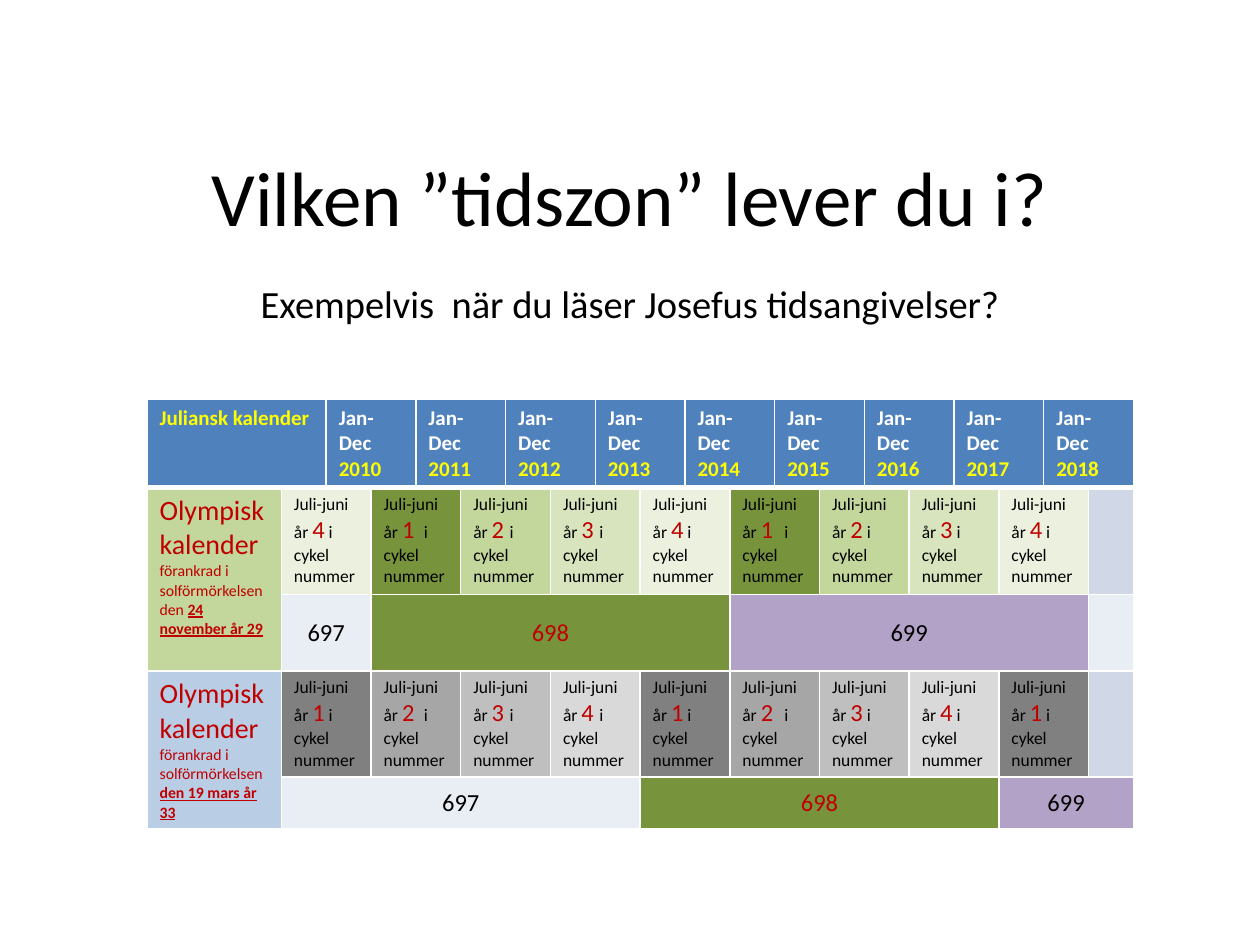
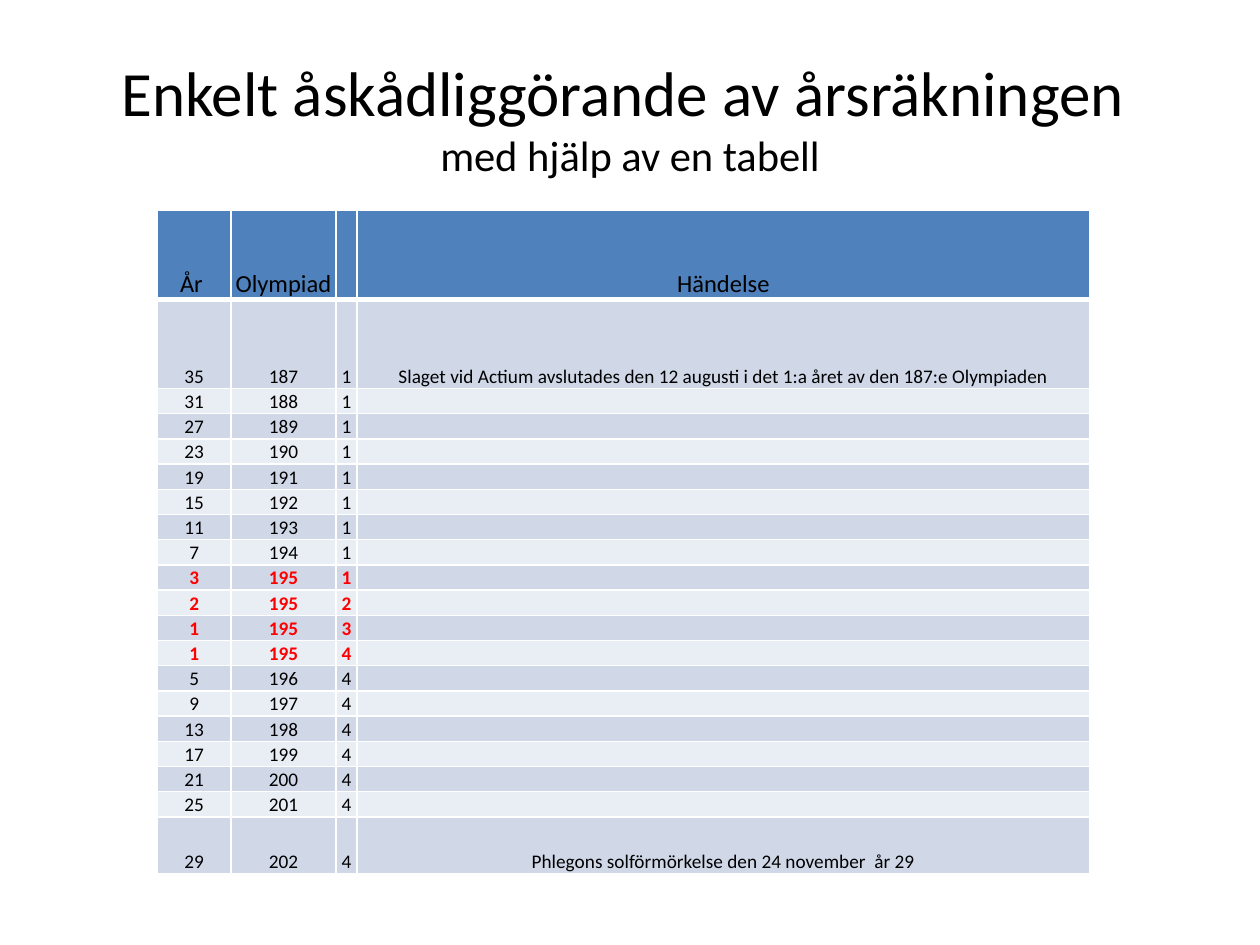
from lxml import etree
from pptx import Presentation
from pptx import util as u
from pptx.dml.color import RGBColor
from pptx.enum import text
from pptx.oxml.ns import qn

HUES = {
    "black": "000000", "white": "FFFFFF", "yellow": "FFFF00",
    "red": "FF0000", "wine": "C00000", "head": "4F81BD",
    "band": "D0D8E8", "pale": "E9EDF4", "sky": "B9CDE5",
    "moss": "77933C", "leaf": "C3D69B", "lime": "D7E4BD", "mist": "EBF1DE",
    "lilac": "B3A2C7", "coal": "808080", "ash": "A6A6A6",
    "fog": "BFBFBF", "smoke": "D9D9D9",
}
CENTRE = text.PP_ALIGN.CENTER
LEFT = text.PP_ALIGN.LEFT
TOP, MIDDLE, BOTTOM = (text.MSO_ANCHOR.TOP, text.MSO_ANCHOR.MIDDLE,
                       text.MSO_ANCHOR.BOTTOM)
UNIT = u.Inches(1) / 12  # the grid has 120 columns and 90 rows


def grid(n):
    return u.Emu(round(n * UNIT))


class Deck:
    face = "Calibri"

    def __init__(self):
        self.prs = Presentation()
        self.prs.slide_width, self.prs.slide_height = grid(120), grid(90)

    def page(self):
        self.slide = self.prs.slides.add_slide(self.prs.slide_layouts[6])

    def style(self, font, size=None, hue=None, bold=None, line=None):
        """Set only what is given."""
        if size:
            font.size = u.Pt(size)
        if hue:
            font.color.rgb = RGBColor.from_string(HUES[hue])
        if bold is not None:
            font.bold = bold
        if line:
            font.underline = True

    def words(self, par, runs, size, hue="black", bold=False, align=LEFT):
        """Fill a paragraph; each run is (text, changes), or None for a break."""
        par.alignment = align
        par.font.name = self.face
        self.style(par.font, size, hue, bold)
        for item in runs:
            if item is None:
                par.add_line_break()
                continue
            run = par.add_run()
            run.text, change = item
            self.style(run.font, **change)

    def title(self, at, size, runs):
        box = self.slide.shapes.add_textbox(*map(grid, at))
        frame = box.text_frame
        frame.word_wrap = True
        frame.vertical_anchor = MIDDLE
        self.words(frame.paragraphs[0], runs, size, align=CENTRE)

    def table(self, left, top, cols, rows):
        frame = self.slide.shapes.add_table(
            len(rows), len(cols), grid(left), grid(top),
            grid(sum(cols)), grid(sum(rows)))
        self.tab = frame.table
        self.tab.first_row = self.tab.horz_banding = False
        for col, width in zip(self.tab.columns, cols):
            col.width = grid(width)
        for row, height in zip(self.tab.rows, rows):
            row.height = grid(height)

    def edge(self, cell, foot):
        """Draw white cell borders, the lower one foot points wide."""
        props = cell._tc.get_or_add_tcPr()
        for side in "LRTB":
            width = foot if side == "B" else 1
            line = etree.SubElement(props, qn(f"a:ln{side}"), w=str(u.Pt(width)))
            fill = etree.SubElement(line, qn("a:solidFill"))
            etree.SubElement(fill, qn("a:srgbClr"), val=HUES["white"])

    def cell(self, row, col, fill, pars=(), span=(1, 1), anchor=TOP,
             tight=False, foot=1):
        """Each paragraph is a dict of arguments for words."""
        high, wide = span
        for r in range(row, row + high):
            for c in range(col, col + wide):
                part = self.tab.cell(r, c)
                self.edge(part, foot)
                part.fill.solid()
                part.fill.fore_color.rgb = RGBColor.from_string(HUES[fill])
        cell = self.tab.cell(row, col)
        if span != (1, 1):
            cell.merge(self.tab.cell(row + high - 1, col + wide - 1))
        cell.vertical_anchor = anchor
        if tight:
            cell.margin_left = cell.margin_right = u.Inches(0.01)
            cell.margin_top, cell.margin_bottom = u.Inches(0.01), 0
        frame = cell.text_frame
        for i, par in enumerate(pars):
            self.words(frame.add_paragraph() if i else frame.paragraphs[0],
                       **par)


# Spaces after the year of the cycle: those in its size, those in small text
GAPS = [("", " "), (" ", " "), (" ", ""), (" ", ""), ("", " "),
        ("  ", ""), ("", " "), ("", " "), ("", " ")]


def cycle(deck, row, name, fill, first, hues, spans):
    """Two table rows for one Olympic calendar: years, then cycle numbers."""
    lead, date = name
    deck.cell(row, 0, fill, [
        dict(runs=[("Olympisk kalender", {})], size=16, hue="wine"),
        dict(runs=[(lead, {}), (date, dict(bold=True, line=True))],
             size=9, hue="wine")], span=(2, 1))
    for i, (big, small) in enumerate(GAPS):
        year = (first - 1 + i) % 4
        runs = [("Juli-juni år ", {}),
                (f"{year + 1}{big}", dict(size=14, hue="wine")),
                (f"{small}i  cykel nummer", {})]
        deck.cell(row, 1 + 2 * i, hues[year], [dict(runs=runs, size=10)],
                  span=(1, 2))
    deck.cell(row, 19, "band")
    col = 1
    looks = [("pale", "black"), ("moss", "wine"), ("lilac", "black")]
    for num, wide, (back, hue) in zip((697, 698, 699), spans, looks):
        deck.cell(row + 1, col, back,
                  [dict(runs=[(str(num), {})], size=14, hue=hue, align=CENTRE)],
                  span=(1, wide), anchor=MIDDLE)
        col += wide
    if col < 20:
        deck.cell(row + 1, col, "pale")


def zones(deck):
    deck.page()
    deck.title((6, 13, 108, 20), 44, [
        ("Vilken ”tidszon” lever du i?", {}), None,
        ("Exempelvis", dict(size=22)), (" ", {}),
        ("när du läser Josefus tidsangivelser?", dict(size=22))])
    deck.table(14, 38, [12.8] + [81.2 / 19] * 19, [8.4, 10.2, 7.3, 10.1, 4.9])
    deck.cell(0, 0, "head", [dict(runs=[("Juliansk kalender", {})], size=12,
                                  hue="yellow", bold=True)],
              span=(1, 2), foot=3)
    for i in range(9):
        runs = [("Jan-Dec ", {}), (str(2010 + i), dict(hue="yellow"))]
        deck.cell(0, 2 + 2 * i, "head",
                  [dict(runs=runs, size=12, hue="white", bold=True)],
                  span=(1, 2), foot=3)
    cycle(deck, 1, ("förankrad i solförmörkelsen den ", "24 november år 29"),
          "leaf", 4, ["moss", "leaf", "lime", "mist"], (2, 8, 8))
    cycle(deck, 3, ("förankrad i solförmörkelsen ", "den 19 mars år 33"),
          "sky", 1, ["coal", "ash", "fog", "smoke"], (8, 8, 3))


def years():
    """Rows of year, Olympiad, year of the Olympiad and event."""
    rows = [[35 - 4 * i, 187 + i, 1, ""] for i in range(8)]
    rows += [[year, 195, i, ""] for i, year in enumerate((3, 2, 1, 1), 1)]
    rows += [[5 + 4 * i, 196 + i, 4, ""] for i in range(7)]
    rows[0][3] = ("Slaget vid Actium avslutades den 12 augusti i det 1:a året "
                  "av den 187:e Olympiaden")
    rows[-1][3] = "Phlegons solförmörkelse den 24 november  år 29"
    return rows


def count(deck):
    deck.page()
    deck.title((6, 3.6, 108, 15), 36, [
        ("Enkelt åskådliggörande av årsräkningen ", {}), None,
        ("med hjälp av en tabell", dict(size=24.3))])
    deck.table(15, 20, [7, 10, 2, 69.8], [8.5] * 2 + [2.4] * 17 + [5.4])
    heads = ["År ", "Olympiad", "", "Händelse"]
    for r, row in enumerate([heads] + years()):
        top, key = r == 0, row[1] == 195
        fill = "head" if top else "band" if r % 2 else "pale"
        for c, item in enumerate(row):
            par = dict(runs=[(str(item), {})] if item else [],
                       size=14 if top else 11, hue="red" if key else "black",
                       bold=key, align=CENTRE)
            deck.cell(r, c, fill, [par], anchor=BOTTOM, tight=True,
                      foot=3 if top else 1)


def main():
    deck = Deck()
    zones(deck)
    count(deck)
    deck.prs.save("out.pptx")


if __name__ == "__main__":
    main()
